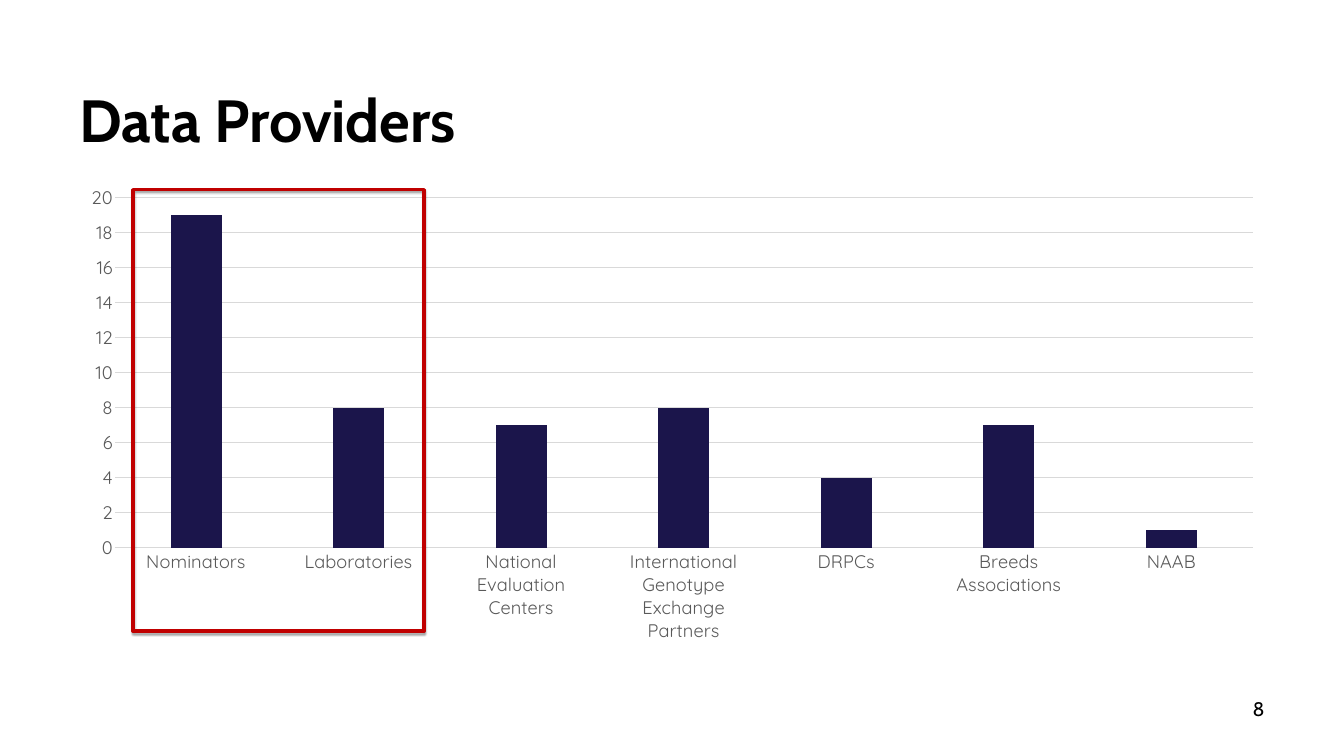
"""Build the Data Providers slide with a column chart and a highlighted group."""
import dataclasses

import lxml.etree
import pptx
import pptx.chart.data
import pptx.dml.color
import pptx.enum.chart
import pptx.enum.shapes
import pptx.enum.text
import pptx.oxml.ns
import pptx.util

WIDTH, HEIGHT = 26.65, 15
PROVIDERS = {
    "Nominators": 19,
    "Laboratories": 8,
    "National Evaluation Centers": 7,
    "International Genotype Exchange Partners": 8,
    "DRPCs": 4,
    "Breeds Associations": 7,
    "NAAB": 1,
}


@dataclasses.dataclass(frozen=True)
class Theme:
    """Fonts, colours and type sizes of the slide."""

    heading_font: str = "Cabin"
    chart_font: str = "Quicksand"
    ink: str = "000000"
    label: str = "595959"
    grid: str = "D9D9D9"
    column: str = "1B154B"
    highlight: str = "C00000"
    title_size: int = 85
    number_size: int = 28
    label_size: int = 26


THEME = Theme()


def colour(code):
    """Return an RGB colour from its hexadecimal code."""
    return pptx.dml.color.RGBColor.from_string(code)


def area(left, top, width, height):
    """Turn shares of the slide's size into lengths."""
    return [
        pptx.util.Inches(share * side)
        for share, side in zip((left, top, width, height), (WIDTH, HEIGHT) * 2)
    ]


def style_font(font, name, size, code, bold=False):
    """Set the face, size, colour and weight of a font."""
    font.name = name
    font.size = pptx.util.Pt(size)
    font.bold = bold
    font.color.rgb = colour(code)


def style_line(line, code, weight):
    """Give a line a solid colour and a weight in points."""
    line.color.rgb = colour(code)
    line.width = pptx.util.Pt(weight)


def write_text(box, text, size, anchor, align, bold=False):
    """Fill a box with one heading-face paragraph."""
    frame = box.text_frame
    frame.word_wrap = True
    frame.auto_size = pptx.enum.text.MSO_AUTO_SIZE.NONE
    frame.vertical_anchor = anchor
    frame.margin_left = frame.margin_right = pptx.util.Inches(0.24)
    frame.margin_top = frame.margin_bottom = pptx.util.Inches(0.12)
    para = frame.paragraphs[0]
    para.text = text
    para.alignment = align
    style_font(para.font, THEME.heading_font, size, THEME.ink, bold)


def add_title(page, text):
    """Place and fill the title placeholder."""
    title = page.shapes.title
    title.left, title.top, title.width, title.height = area(0.05, 0.017, 0.9, 0.195)
    write_text(title, text, THEME.title_size, pptx.enum.text.MSO_ANCHOR.BOTTOM,
               pptx.enum.text.PP_ALIGN.LEFT, bold=True)


def add_page_number(page, number):
    """Write the page number at the lower right."""
    box = page.shapes.add_textbox(*area(0.717, 0.911, 0.233, 0.053))
    write_text(box, str(number), THEME.number_size, pptx.enum.text.MSO_ANCHOR.MIDDLE,
               pptx.enum.text.PP_ALIGN.RIGHT)


def style_axis(axis):
    """Apply the shared look of both axes."""
    axis.major_tick_mark = axis.minor_tick_mark = pptx.enum.chart.XL_TICK_MARK.NONE
    style_font(axis.tick_labels.font, THEME.chart_font, THEME.label_size, THEME.label)


def add_columns(page, counts):
    """Draw the counts as a column chart."""
    data = pptx.chart.data.CategoryChartData()
    data.categories = list(counts)
    data.add_series("Series 1", list(counts.values()))
    kind = pptx.enum.chart.XL_CHART_TYPE.COLUMN_CLUSTERED
    chart = page.shapes.add_chart(kind, *area(0.05, 0.233, 0.9, 0.629), data).chart
    chart.has_legend = chart.has_title = False
    style_font(chart.font, THEME.chart_font, 10, THEME.ink)

    plot = chart.plots[0]
    plot.gap_width, plot.overlap = 219, -27
    plot.vary_by_categories = False
    fill = plot.series[0].format.fill
    fill.solid()
    fill.fore_color.rgb = colour(THEME.column)

    style_axis(chart.category_axis)
    style_line(chart.category_axis.format.line, THEME.grid, 0.75)
    values = chart.value_axis
    style_axis(values)
    values.minimum_scale, values.maximum_scale, values.major_unit = 0, 20, 2
    values.format.line.fill.background()
    style_line(values.major_gridlines.format.line, THEME.grid, 0.75)


def add_shadow(shape, blur, distance, degrees, percent):
    """Cast a soft shadow from a shape."""
    shape.shadow.inherit = False
    tag = pptx.oxml.ns.qn
    effects = shape._element.spPr.find(tag("a:effectLst"))
    shadow = lxml.etree.SubElement(
        effects, tag("a:outerShdw"), blurRad=str(pptx.util.Pt(blur)),
        dist=str(pptx.util.Pt(distance)), dir=str(degrees * 60000), rotWithShape="0")
    tint = lxml.etree.SubElement(shadow, tag("a:srgbClr"), val=THEME.ink)
    lxml.etree.SubElement(tint, tag("a:alpha"), val=str(percent * 1000))


def add_highlight(page):
    """Frame the first two columns."""
    frame = page.shapes.add_shape(pptx.enum.shapes.MSO_SHAPE.RECTANGLE,
                                  *area(0.099, 0.251, 0.2165, 0.584))
    frame.fill.background()
    style_line(frame.line, THEME.highlight, 5)
    add_shadow(frame, 3.1, 1.8, 90, 35)


def main():
    """Build and save the deck."""
    deck = pptx.Presentation()
    deck.slide_width = pptx.util.Inches(WIDTH)
    deck.slide_height = pptx.util.Inches(HEIGHT)
    page = deck.slides.add_slide(deck.slide_layouts.get_by_name("Title Only"))
    add_title(page, "Data Providers")
    add_page_number(page, 8)
    add_columns(page, PROVIDERS)
    add_highlight(page)
    deck.save("out.pptx")


if __name__ == "__main__":
    main()
